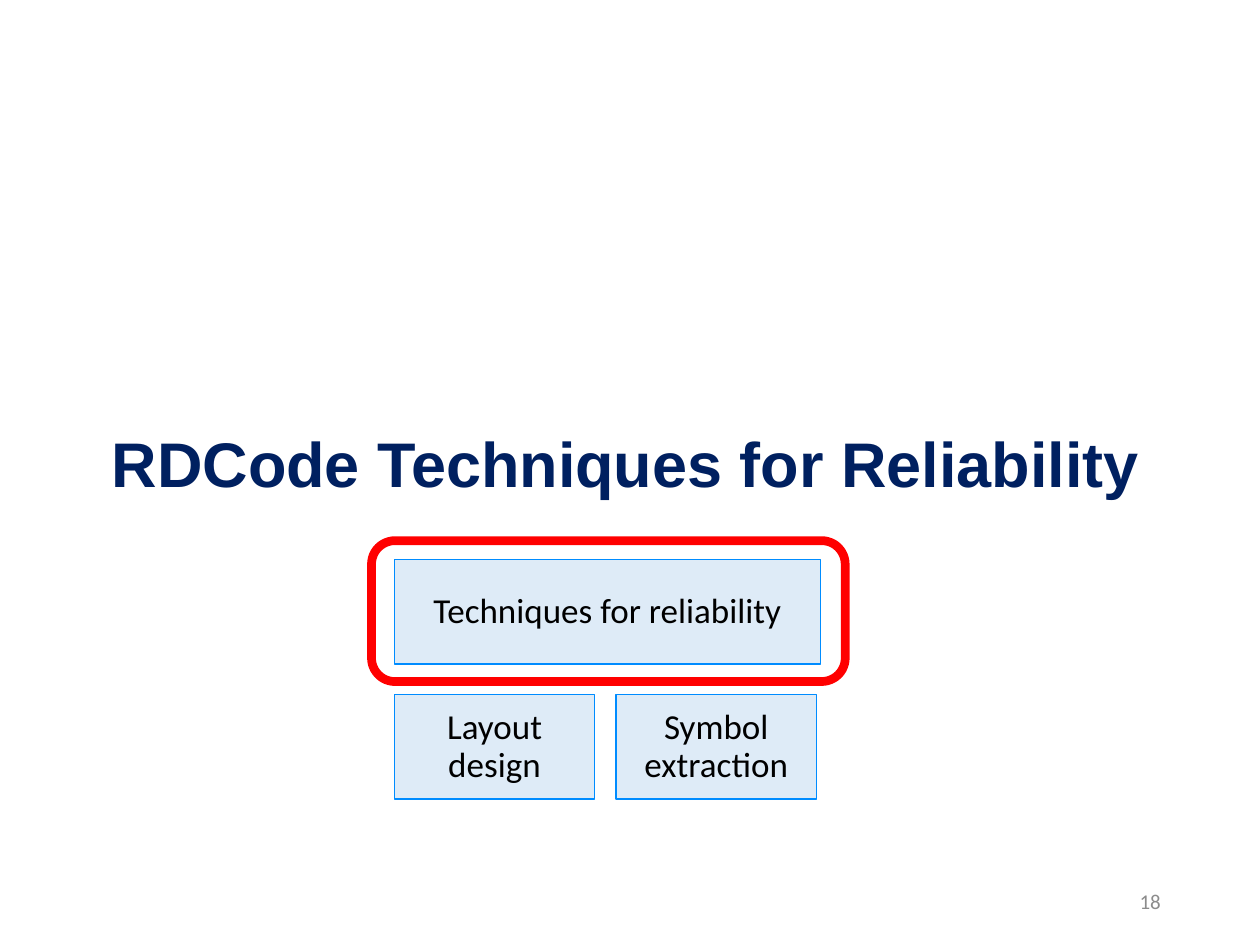
from dataclasses import dataclass

from pptx import Presentation
from pptx.dml.color import RGBColor
from pptx.enum.shapes import MSO_SHAPE as Shape
from pptx.enum.text import MSO_ANCHOR as Anchor, MSO_AUTO_SIZE as AutoSize, PP_ALIGN as Align
from pptx.util import Cm, Pt


@dataclass(frozen=True)
class Theme:
    title_color: RGBColor = RGBColor(0x00, 0x20, 0x60)
    box_text: RGBColor = RGBColor(0x00, 0x00, 0x00)
    box_fill: RGBColor = RGBColor(0xDE, 0xEB, 0xF7)
    box_line: RGBColor = RGBColor(0x00, 0x8C, 0xFF)
    highlight: RGBColor = RGBColor(0xFF, 0x00, 0x00)
    number_color: RGBColor = RGBColor(0x8C, 0x8C, 0x8C)
    title_font: str = "Arial"
    body_font: str = "Calibri"
    title_size: Pt = Pt(36)
    box_size: Pt = Pt(20)
    number_size: Pt = Pt(12)


theme = Theme()


def format_text(paragraph, name, size, color, alignment, bold=False):
    paragraph.alignment = alignment
    font = paragraph.font
    font.name, font.size, font.bold = name, size, bold
    font.color.rgb = color


presentation = Presentation()
presentation.slide_width, presentation.slide_height = Cm(25.4), Cm(19.05)
slide = presentation.slides.add_slide(presentation.slide_layouts[5])

# Title
title = slide.shapes.title
title.left, title.top, title.width, title.height = Cm(0.66), Cm(7.44), Cm(23.9), Cm(2.79)
title.text_frame.text = "RDCode Techniques for Reliability"
title.text_frame.vertical_anchor = Anchor.BOTTOM
title.text_frame.auto_size = AutoSize.NONE
paragraph = title.text_frame.paragraphs[0]
paragraph.line_spacing = 0.9
format_text(paragraph, theme.title_font, theme.title_size, theme.title_color, Align.CENTER, True)

# Outline boxes: the topic above its two parts
left, top, height, row_step = 7.95, 11.28, 2.11, 2.72
part_width, part_step = 4.04, 4.47
boxes = [
    ("Techniques for reliability", left, top, 8.59),
    ("Layout design", left, top + row_step, part_width),
    ("Symbol extraction", left + part_step, top + row_step, part_width),
]
for text, box_left, box_top, width in boxes:
    box = slide.shapes.add_shape(Shape.RECTANGLE, Cm(box_left), Cm(box_top), Cm(width), Cm(height))
    box.shadow.inherit = False
    box.fill.solid()
    box.fill.fore_color.rgb = theme.box_fill
    box.line.color.rgb = theme.box_line
    box.line.width = Pt(0.75)
    frame = box.text_frame
    frame.text = text
    frame.word_wrap = True
    frame.vertical_anchor = Anchor.MIDDLE
    frame.margin_left = frame.margin_right = frame.margin_top = frame.margin_bottom = Cm(0.18)
    paragraph = frame.paragraphs[0]
    paragraph.line_spacing = 0.9
    format_text(paragraph, theme.body_font, theme.box_size, theme.box_text, Align.CENTER)

# Highlight around the current topic
highlight = slide.shapes.add_shape(Shape.ROUNDED_RECTANGLE, Cm(7.49), Cm(10.9), Cm(9.55), Cm(2.84))
highlight.shadow.inherit = False
highlight.fill.background()
highlight.line.color.rgb = theme.highlight
highlight.line.width = Pt(5)

# Slide number
number = slide.shapes.add_textbox(Cm(17.93), Cm(17.65), Cm(5.72), Cm(1.02))
number.text_frame.text = "18"
number.text_frame.word_wrap = True
number.text_frame.vertical_anchor = Anchor.MIDDLE
format_text(number.text_frame.paragraphs[0], theme.body_font, theme.number_size,
            theme.number_color, Align.RIGHT)

presentation.save("out.pptx")
